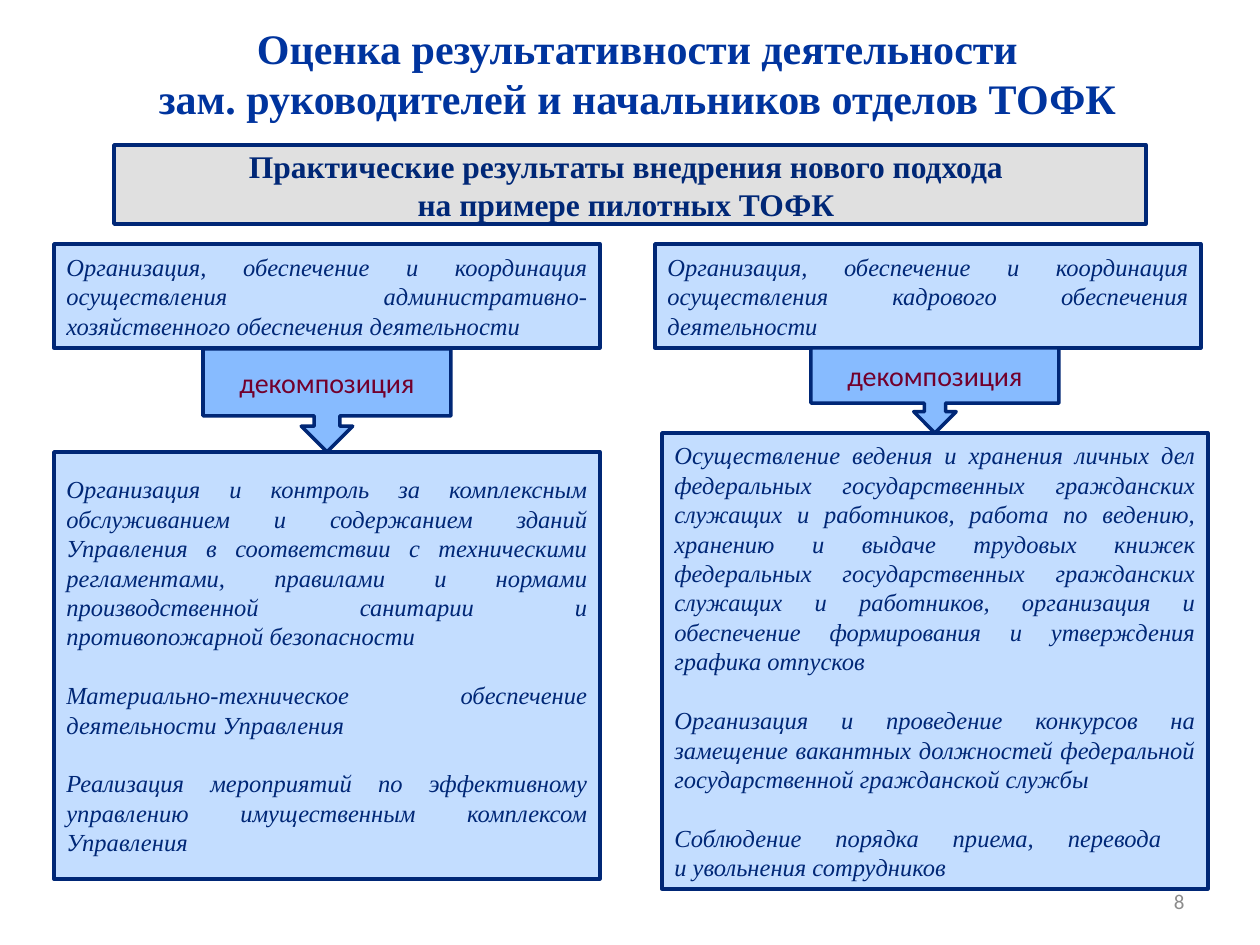
from pptx import Presentation
from pptx.dml.color import RGBColor as Rgb
from pptx.enum.shapes import MSO_SHAPE as Shape
from pptx.enum.text import MSO_ANCHOR as Anchor, PP_ALIGN as Align
from pptx.util import Pt

PX = 914400 // 126  # EMU in one px
HUES = {
    "title": "00349E", "navy": "002776", "pale": "C3DDFF", "blue": "87BBFF",
    "gray": "E0E0E0", "wine": "72002C", "page": "8C8C8C",
}
SERIF, SANS = "Times New Roman", "Calibri"

# Text formats
HEAD = dict(name=SERIF, size=Pt(24), bold=True, hue="title")
BAND = dict(name=SERIF, size=Pt(18), bold=True, hue="navy")
BODY = dict(name=SERIF, size=Pt(14), italic=True, hue="navy")
STEP = dict(name=SANS, size=Pt(16), hue="wine")
PAGE = dict(name=SANS, size=Pt(12), hue="page")
GAP = Pt(16.8)  # one body line between paragraphs

# Each column: top box, arrow and bottom box with their places in px
COLS = [
    dict(
        goal="Организация, обеспечение и координация осуществления "
             "административно-хозяйственного обеспечения деятельности",
        goal_at=(54, 244, 546, 104), step_at=(203, 349, 248, 103),
        task_at=(54, 452, 546, 427),
        tasks=[
            "Организация и контроль за комплексным обслуживанием и содержанием "
            "зданий Управления в соответствии с техническими регламентами, "
            "правилами и нормами производственной санитарии и "
            "противопожарной безопасности",
            "Материально-техническое обеспечение деятельности Управления",
            "Реализация мероприятий по эффективному управлению имущественным "
            "комплексом Управления",
        ],
    ),
    dict(
        goal="Организация, обеспечение и координация осуществления "
             "кадрового обеспечения деятельности",
        goal_at=(655, 244, 546, 104), step_at=(811, 348, 248, 85),
        task_at=(662, 433, 546, 456),
        tasks=[
            "Осуществление ведения и хранения личных дел федеральных "
            "государственных гражданских служащих и работников, работа по "
            "ведению, хранению и выдаче трудовых книжек федеральных "
            "государственных гражданских служащих и работников, организация и "
            "обеспечение формирования и утверждения графика отпусков",
            "Организация и проведение конкурсов на замещение вакантных "
            "должностей федеральной государственной гражданской службы",
            "Соблюдение порядка приема, перевода \vи увольнения сотрудников",
        ],
    ),
]


def scale(at):
    return [n * PX for n in at]


def color(hue):
    return Rgb.from_string(HUES[hue])


def write(frame, texts, form, align, anchor=Anchor.MIDDLE):
    """Fill a text frame, one paragraph per text."""
    frame.word_wrap = True
    frame.vertical_anchor = anchor
    for i, text in enumerate(texts):
        para = frame.add_paragraph() if i else frame.paragraphs[0]
        para.text = text
        para.alignment = align
        para.space_before = GAP if i else Pt(0)
        for run in para.runs:
            for key, val in form.items():
                if key == "hue":
                    run.font.color.rgb = color(val)
                else:
                    setattr(run.font, key, val)


def add_box(slide, kind, at, fill, texts, form, align):
    box = slide.shapes.add_shape(kind, *scale(at))
    box.shadow.inherit = False
    box.fill.solid()
    box.fill.fore_color.rgb = color(fill)
    box.line.color.rgb = color("navy")
    box.line.width = Pt(2)
    write(box.text_frame, texts, form, align)


def add_title(slide, at, text):
    title = slide.shapes.title
    title.left, title.top, title.width, title.height = scale(at)
    write(title.text_frame, text, HEAD, Align.CENTER, Anchor.TOP)
    for para in title.text_frame.paragraphs:
        para.space_before = Pt(0)


def add_col(slide, col):
    add_box(slide, Shape.RECTANGLE, col["goal_at"], "pale",
            [col["goal"]], BODY, Align.JUSTIFY)
    add_box(slide, Shape.RECTANGLE, col["task_at"], "pale",
            col["tasks"], BODY, Align.JUSTIFY)
    add_box(slide, Shape.DOWN_ARROW_CALLOUT, col["step_at"], "blue",
            ["декомпозиция"], STEP, Align.CENTER)


def main():
    deck = Presentation()
    deck.slide_width, deck.slide_height = scale((1260, 945))
    slide = deck.slides.add_slide(deck.slide_layouts[5])

    # Title and band
    add_title(slide, (15, 16, 1245, 115), [
        "Оценка результативности деятельности",
        "зам. руководителей и начальников отделов ТОФК",
    ])
    add_box(slide, Shape.RECTANGLE, (114, 145, 1032, 79), "gray",
            ["Практические результаты внедрения нового подхода "
             "\vна примере пилотных ТОФК "], BAND, Align.CENTER)

    # Two columns
    for col in COLS:
        add_col(slide, col)

    # Page number
    page = slide.shapes.add_textbox(*scale((903, 876, 294, 50)))
    write(page.text_frame, ["8"], PAGE, Align.RIGHT)

    deck.save("out.pptx")


if __name__ == "__main__":
    main()
